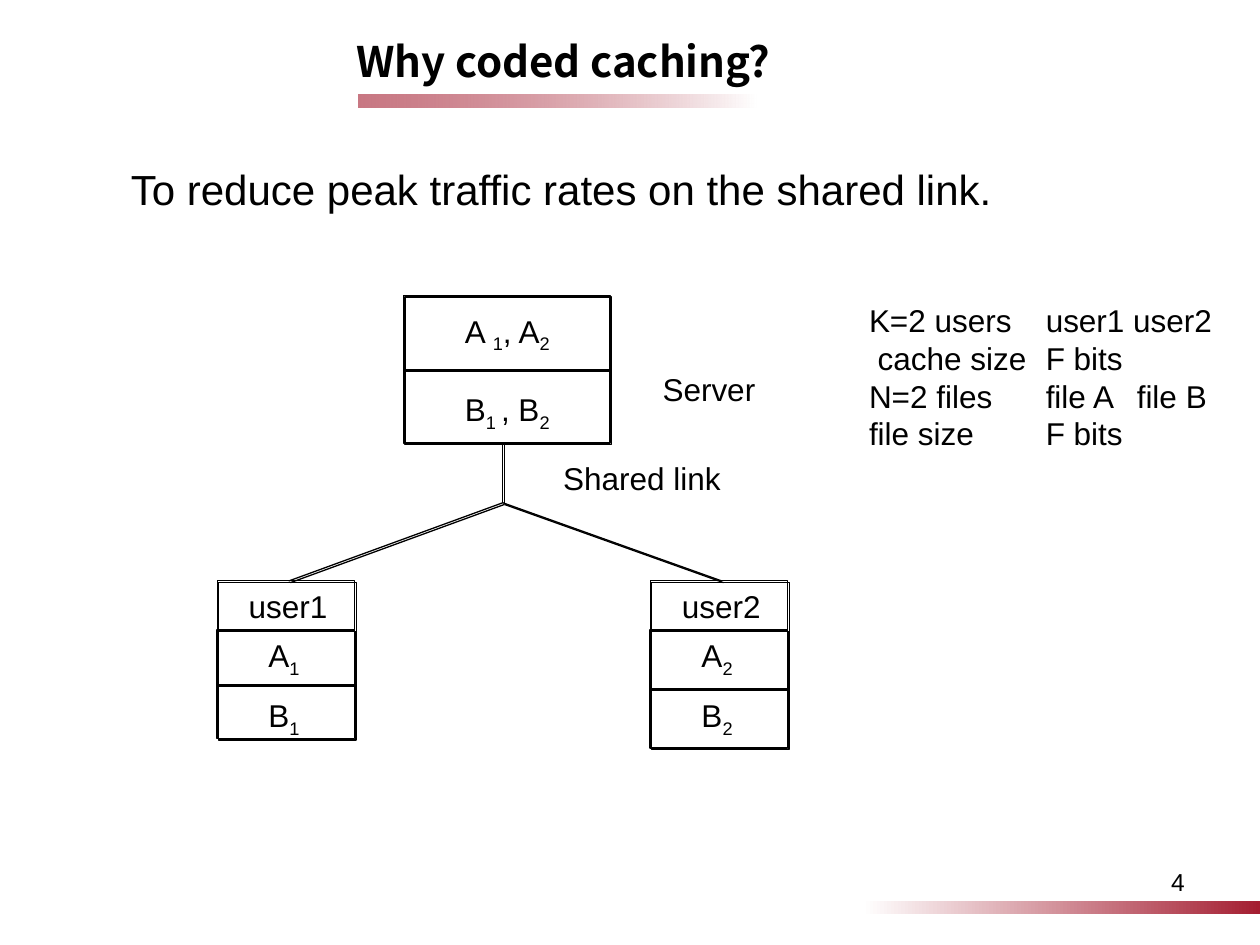
from dataclasses import dataclass

from lxml.etree import SubElement
from pptx import Presentation
from pptx.dml.color import RGBColor
from pptx.enum.shapes import MSO_CONNECTOR, MSO_SHAPE
from pptx.enum.text import PP_ALIGN
from pptx.oxml.ns import qn
from pptx.util import Pt

BLACK = RGBColor(0x00, 0x00, 0x00)
WHITE = RGBColor(0xFF, 0xFF, 0xFF)
CRIMSON = RGBColor(0xA4, 0x1E, 0x31)
BODY_FONT = "Arial"
TITLE_FONT = "Noto Sans CJK SC"

LABEL_HEIGHT = 29
BAR_WIDTH, BAR_HEIGHT = 227, 7.2
JUNCTION = (287.3, 287.3)
SERVER_LEFT, SERVER_TOP, SERVER_WIDTH, SERVER_HEIGHT = 230.5, 168.8, 118, 84.4
USER_TOP, USER_WIDTH, HEADER_HEIGHT = 332, 78.5, 28


@dataclass(frozen=True)
class Label:
    """Text with subscripts: every second part between bars is lowered."""
    text: str
    left: float
    top: float
    width: float
    height: float = LABEL_HEIGHT
    size: float = 18
    font: str = BODY_FONT
    bold: bool = False
    align: PP_ALIGN = PP_ALIGN.LEFT
    wrap: bool = False
    tabs: tuple[float, ...] = ()


@dataclass(frozen=True)
class User:
    number: int
    left: float
    cache_height: float


def add_label(slide, label: Label) -> None:
    box = slide.shapes.add_textbox(
        Pt(label.left), Pt(label.top), Pt(label.width), Pt(label.height))
    frame = box.text_frame
    frame.word_wrap = label.wrap
    for index, line in enumerate(label.text.split("\n")):
        paragraph = frame.add_paragraph() if index else frame.paragraphs[0]
        paragraph.alignment = label.align
        if label.tabs:
            tab_list = SubElement(paragraph._p.get_or_add_pPr(), qn("a:tabLst"))
            for position in label.tabs:
                SubElement(tab_list, qn("a:tab"), pos=str(Pt(position)), algn="l")
        font = paragraph.font
        font.name, font.size, font.bold = label.font, Pt(label.size), label.bold
        font.color.rgb = BLACK
        for part, text in enumerate(line.split("|")):
            if text:
                run = paragraph.add_run()
                run.text = text
                if part % 2:
                    run._r.get_or_add_rPr().set("baseline", "-25000")


def add_outline(shape, width: float) -> None:
    """Black line with a hard shadow to the lower right."""
    shape.line.color.rgb = BLACK
    shape.line.width = Pt(width)
    effects = shape._element.spPr.find(qn("a:effectLst"))
    if effects is None:
        effects = SubElement(shape._element.spPr, qn("a:effectLst"))
    shadow = SubElement(effects, qn("a:outerShdw"), dist=str(Pt(1.4)),
                        dir="2700000", algn="ctr", rotWithShape="0")
    SubElement(shadow, qn("a:srgbClr"), val=str(BLACK))


def add_frame(slide, left: float, top: float, width: float, height: float,
              line_width: float = 0.75) -> None:
    frame = slide.shapes.add_shape(
        MSO_SHAPE.RECTANGLE, Pt(left), Pt(top), Pt(width), Pt(height))
    frame.shadow.inherit = False
    frame.fill.background()
    add_outline(frame, line_width)


def add_line(slide, start: tuple[float, float], end: tuple[float, float]) -> None:
    line = slide.shapes.add_connector(
        MSO_CONNECTOR.STRAIGHT, *(Pt(value) for value in start + end))
    add_outline(line, 0.75)


def add_bar(slide, left: float, top: float, rotation: float = 0,
            opacity: int = 100) -> None:
    bar = slide.shapes.add_shape(
        MSO_SHAPE.RECTANGLE, Pt(left), Pt(top), Pt(BAR_WIDTH), Pt(BAR_HEIGHT))
    bar.shadow.inherit = False
    bar.rotation = rotation
    bar.line.fill.background()
    bar.fill.gradient()
    bar.fill.gradient_angle = 0
    for stop, color in zip(bar.fill.gradient_stops, (WHITE, CRIMSON)):
        stop.color.rgb = color
    if opacity < 100:
        end_color = list(bar._element.spPr.iter(qn("a:srgbClr")))[-1]
        SubElement(end_color, qn("a:alpha"), val=str(opacity * 1000))


def add_server(slide) -> None:
    middle = SERVER_TOP + SERVER_HEIGHT / 2
    add_frame(slide, SERVER_LEFT, SERVER_TOP, SERVER_WIDTH, SERVER_HEIGHT)
    add_line(slide, (SERVER_LEFT, middle), (SERVER_LEFT + SERVER_WIDTH, middle))
    add_line(slide, (JUNCTION[0], SERVER_TOP + SERVER_HEIGHT), JUNCTION)
    add_label(slide, Label("A |1|, A|2", 258.5, 174.5, 65.5))
    add_label(slide, Label("B|1 |, B|2", 258.5, 219.5, 65.5))


def add_user(slide, user: User) -> None:
    cache_top = USER_TOP + HEADER_HEIGHT
    middle = cache_top + user.cache_height / 2
    add_frame(slide, user.left, USER_TOP, USER_WIDTH, HEADER_HEIGHT, 0.5)
    add_frame(slide, user.left, cache_top, USER_WIDTH, user.cache_height)
    add_line(slide, (user.left, middle), (user.left + USER_WIDTH, middle))
    add_line(slide, (user.left + 41, USER_TOP), JUNCTION)
    add_label(slide, Label(f"user{user.number}", user.left + 11, USER_TOP, 60))
    for file_name, top in (("A", cache_top), ("B", cache_top + 34)):
        add_label(slide, Label(f"{file_name}|{user.number}", user.left + 22.3, top, 33))


LABELS = (
    Label("Why coded caching?", 196.5, 16.5, 315.5, 36, 24, TITLE_FONT,
          bold=True, wrap=True),
    Label("To reduce peak traffic rates on the shared link.",
          67.7, 90, 546, 58, 24, wrap=True),
    Label("K=2 users\tuser1 user2\n cache size\tF bits\n"
          "N=2 files\tfile A\tfile B\nfile size\tF bits",
          489.5, 168.5, 214, 94.5, wrap=True, tabs=(101, 153)),
    Label("Server", 371.5, 208, 68.5),
    Label("Shared link", 314.7, 258.5, 105),
    Label("4", 516, 492, 168, 37, 14, align=PP_ALIGN.RIGHT, wrap=True),
)
USERS = (User(1, 124, 62), User(2, 371.5, 67.5))


def main() -> None:
    presentation = Presentation()
    presentation.slide_width, presentation.slide_height = Pt(720), Pt(540)
    slide = presentation.slides.add_slide(presentation.slide_layouts[6])

    # Title underline and footer bar
    add_bar(slide, 205, 54, rotation=180, opacity=60)
    add_bar(slide, 720 - BAR_WIDTH, 515)

    # Title, statement, parameters and captions
    for label in LABELS:
        add_label(slide, label)

    # Network diagram
    add_server(slide)
    for user in USERS:
        add_user(slide, user)

    presentation.save("out.pptx")


if __name__ == "__main__":
    main()
